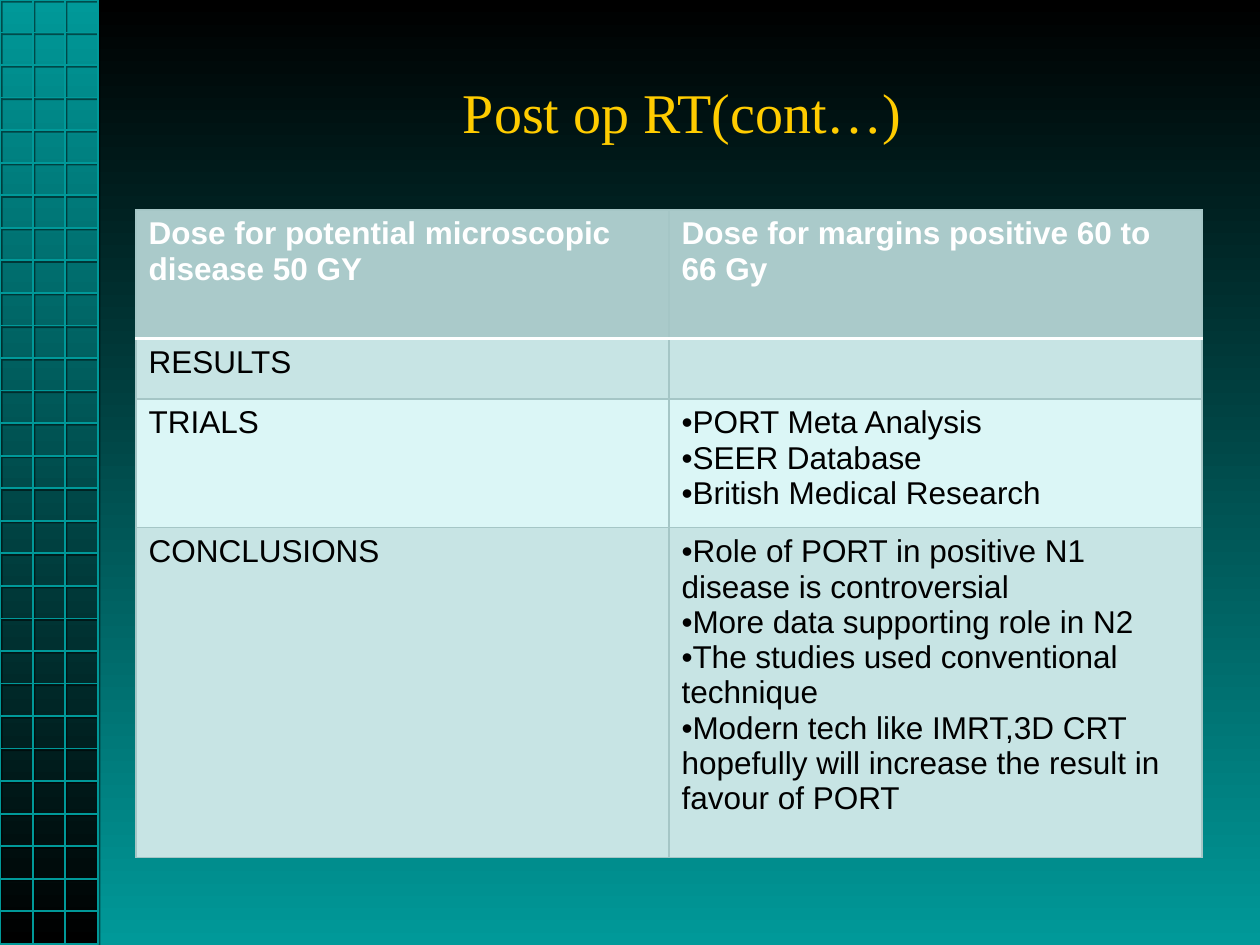
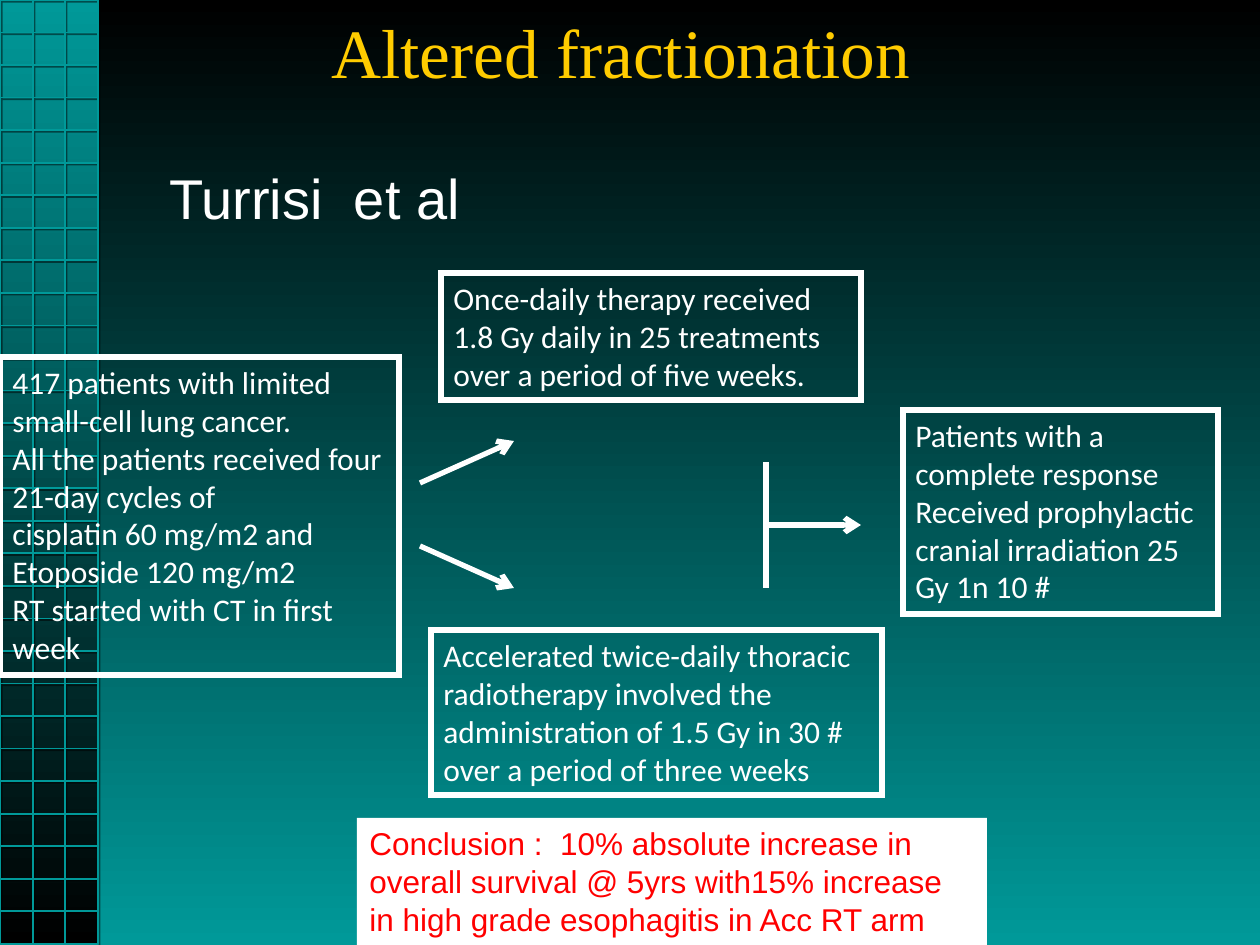
from lxml import etree
from pptx import Presentation
from pptx import util as u
from pptx.dml.color import RGBColor
from pptx.enum import shapes, text
from pptx.oxml.ns import qn

COLOURS = {
    "black": "000000", "teal": "009999", "gold": "FFCC00", "white": "FFFFFF",
    "red": "FF0000", "header": "AACACA", "tinted": "C7E4E4", "pale": "DBF6F6",
    "border": "A5C6C6",
}
RGB = {name: RGBColor.from_string(code) for name, code in COLOURS.items()}
FORMATS = {
    "title": {"name": "Times New Roman", "size": u.Pt(32), "color": "gold"},
    "big title": {"name": "Times New Roman", "size": u.Pt(39.6), "color": "gold"},
    "header": {"name": "Arial", "size": u.Pt(18), "bold": True, "color": "white"},
    "cell": {"name": "Arial", "size": u.Pt(18), "bold": False, "color": "black"},
    "study": {"name": "Arial", "size": u.Pt(32), "color": "white"},
    "step": {"name": "Calibri", "size": u.Pt(18), "color": "white"},
    "conclusion": {"name": "Arial", "size": u.Pt(18), "color": "red"},
}


def px(*lengths):
    """Turn pixels, 126 to the inch, into EMU."""
    emu = [u.Emu(int(length * 914400 / 126)) for length in lengths]
    return emu if len(emu) > 1 else emu[0]


def write(frame, lines, style, align=text.PP_ALIGN.LEFT, bullet=False):
    for number, line in enumerate(lines):
        para = frame.add_paragraph() if number else frame.paragraphs[0]
        para.alignment = align
        if bullet:
            properties = para._p.get_or_add_pPr()
            properties.set("marL", "0")
            properties.set("indent", "0")
            etree.SubElement(properties, qn("a:buFont"), typeface="Arial")
            etree.SubElement(properties, qn("a:buChar"), char="•")
        span = para.add_run()
        span.text = line
        for key, value in FORMATS[style].items():
            if key == "color":
                span.font.color.rgb = RGB[value]
            else:
                setattr(span.font, key, value)


deck = Presentation()
deck.slide_width, deck.slide_height = px(1260, 945)
title_only = deck.slide_layouts[5]
table_page = deck.slides.add_slide(title_only)
trial_page = deck.slides.add_slide(title_only)

# Shared look: background gradient and gridded band on the master
master = deck.slide_master
BAND_WIDTH, BAND_HEIGHT, BAND_ROWS = 98, 944, 29
band = table_page.shapes.add_shape(
    shapes.MSO_SHAPE.RECTANGLE, *px(0, 0, BAND_WIDTH, BAND_HEIGHT))
band.shadow.inherit = False
band.line.fill.background()
for fill, names in ((master.background.fill, ("black", "teal")),
                    (band.fill, ("teal", "black"))):
    fill.gradient()
    fill.gradient_angle = 270
    for stop, name in zip(fill.gradient_stops, names):
        stop.color.rgb = RGB[name]

grid_points = [(0, BAND_HEIGHT), (33, BAND_HEIGHT), (33, 0), (65, 0),
               (65, BAND_HEIGHT), (BAND_WIDTH, BAND_HEIGHT), (BAND_WIDTH, 0)]
for row in range(1, BAND_ROWS + 1):
    y = row * BAND_HEIGHT / BAND_ROWS
    ends = [(BAND_WIDTH, y), (0, y)]
    grid_points += ends if row % 2 else ends[::-1]
grid_points += [(BAND_WIDTH, BAND_HEIGHT), (BAND_WIDTH, 0)]
builder = table_page.shapes.build_freeform(0, 0)
builder.add_line_segments([px(*point) for point in grid_points], close=True)
grid = builder.convert_to_shape()
grid.fill.background()
grid.line.color.rgb = RGB["teal"]
grid.line.width = u.Pt(1)
grid.shadow.inherit = False
effects = grid._element.spPr.find(qn("a:effectLst"))
shadow = etree.SubElement(effects, qn("a:outerShdw"), blurRad="0",
                          dist="17780", dir="2700000", algn="ctr", rotWithShape="0")
shadow_colour = etree.SubElement(shadow, qn("a:srgbClr"), val=COLOURS["black"])
etree.SubElement(shadow_colour, qn("a:alpha"), val="50000")

for order, part in enumerate((band, grid)):
    part._element.nvSpPr.cNvPr.set("id", str(101 + order))
    master.shapes._spTree.insert(2 + order, part._element)

# Titles; the second sits high in its frame
for page, words, style, place, bottom in (
        (table_page, "Post op RT(cont…)", "title", (147, 31, 1071, 160), 6),
        (trial_page, "Altered fractionation", "big title", (54, 36, 1134, 110), 86)):
    title = page.shapes.title
    title.left, title.top, title.width, title.height = px(*place)
    frame = title.text_frame
    frame.auto_size = text.MSO_AUTO_SIZE.NONE
    frame.vertical_anchor = text.MSO_ANCHOR.MIDDLE
    frame.margin_bottom = px(bottom)
    write(frame, [words], style, text.PP_ALIGN.CENTER)

# Table of doses, trials and conclusions
ROWS = [
    (129, "header", ["Dose for potential microscopic disease 50 GY"],
     ["Dose for margins positive 60 to 66 Gy"]),
    (60, "tinted", ["RESULTS"], []),
    (129, "pale", ["TRIALS"],
     ["PORT Meta Analysis", "SEER Database", "British Medical Research"]),
    (330, "tinted", ["CONCLUSIONS"],
     ["Role of PORT in positive N1 disease is controversial",
      "More data supporting role in N2",
      "The studies used conventional technique",
      "Modern tech like IMRT,3D CRT hopefully will increase the result "
      "in favour of PORT"]),
]
table = table_page.shapes.add_table(
    len(ROWS), 2, *px(136, 210, 1066, sum(row[0] for row in ROWS))).table
table.first_row = table.horz_banding = False
for column in table.columns:
    column.width = px(533)
for row, (height, colour, *contents) in enumerate(ROWS):
    table.rows[row].height = px(height)
    for column, lines in enumerate(contents):
        cell = table.cell(row, column)
        properties = cell._tc.get_or_add_tcPr()
        for side in "LRTB":
            heavy = (row, side) in ((0, "B"), (1, "T"))
            edge = etree.SubElement(properties, qn("a:ln" + side),
                                    w=str(u.Pt(2 if heavy else 0.75)))
            paint = etree.SubElement(edge, qn("a:solidFill"))
            etree.SubElement(paint, qn("a:srgbClr"),
                             val=COLOURS["white" if heavy else "border"])
        cell.fill.solid()
        cell.fill.fore_color.rgb = RGB[colour]
        write(cell.text_frame, lines, "cell" if row else "header",
              bullet=row > 0 and column > 0)

# Trial flow
BOXES = [
    ((0, 357, 399, 318), "step",
     ["417 patients with limited", "small-cell lung cancer.",
      "All the patients received four", "21-day cycles of",
      "cisplatin 60 mg/m2 and Etoposide 120 mg/m2",
      "RT started with CT in first week"]),
    ((441, 273, 420, 127), "step",
     ["Once-daily therapy received", "1.8 Gy daily in 25 treatments",
      "over a period of five weeks."]),
    ((431, 630, 451, 165), "step",
     ["Accelerated twice-daily thoracic", "radiotherapy involved the",
      "administration of 1.5 Gy in 30 #", "over a period of three weeks"]),
    ((903, 410, 315, 204), "step",
     ["Patients with a complete response",
      "Received prophylactic cranial irradiation 25 Gy 1n 10 #"]),
    ((357, 818, 630, 127), "conclusion",
     ["Conclusion :  10% absolute increase in overall survival @ 5yrs "
      "with15% increase in high grade esophagitis in Acc RT arm"]),
]
for place, style, lines in BOXES:
    box = trial_page.shapes.add_shape(shapes.MSO_SHAPE.RECTANGLE, *px(*place))
    box.shadow.inherit = False
    frame = box.text_frame
    frame.word_wrap = True
    frame.vertical_anchor = text.MSO_ANCHOR.TOP
    write(frame, lines, style)
    if style == "step":
        frame.auto_size = text.MSO_AUTO_SIZE.SHAPE_TO_FIT_TEXT
        box.fill.background()
        box.line.color.rgb = RGB["white"]
        box.line.width = u.Pt(3)
        etree.SubElement(box.line._get_or_add_ln(), qn("a:miter"), lim="800000")
    else:
        frame.auto_size = text.MSO_AUTO_SIZE.NONE
        box.fill.solid()
        box.fill.fore_color.rgb = RGB["white"]
        box.line.fill.background()

for ends, arrow in (((766, 525, 861, 525), True), ((420, 546, 514, 588), True),
                    ((420, 483, 514, 441), True), ((766, 462, 766, 588), False)):
    line = trial_page.shapes.add_connector(shapes.MSO_CONNECTOR.STRAIGHT, *px(*ends))
    line.line.color.rgb = RGB["white"]
    line.line.width = u.Pt(3)
    if arrow:
        etree.SubElement(line.line._get_or_add_ln(), qn("a:tailEnd"), type="arrow")
    etree.SubElement(line._element.spPr, qn("a:effectLst"))

study = trial_page.shapes.add_textbox(*px(157, 157, 319, 81))
study.text_frame.word_wrap = False
study.text_frame.auto_size = text.MSO_AUTO_SIZE.SHAPE_TO_FIT_TEXT
write(study.text_frame, ["Turrisi  et al"], "study")

deck.save("out.pptx")
